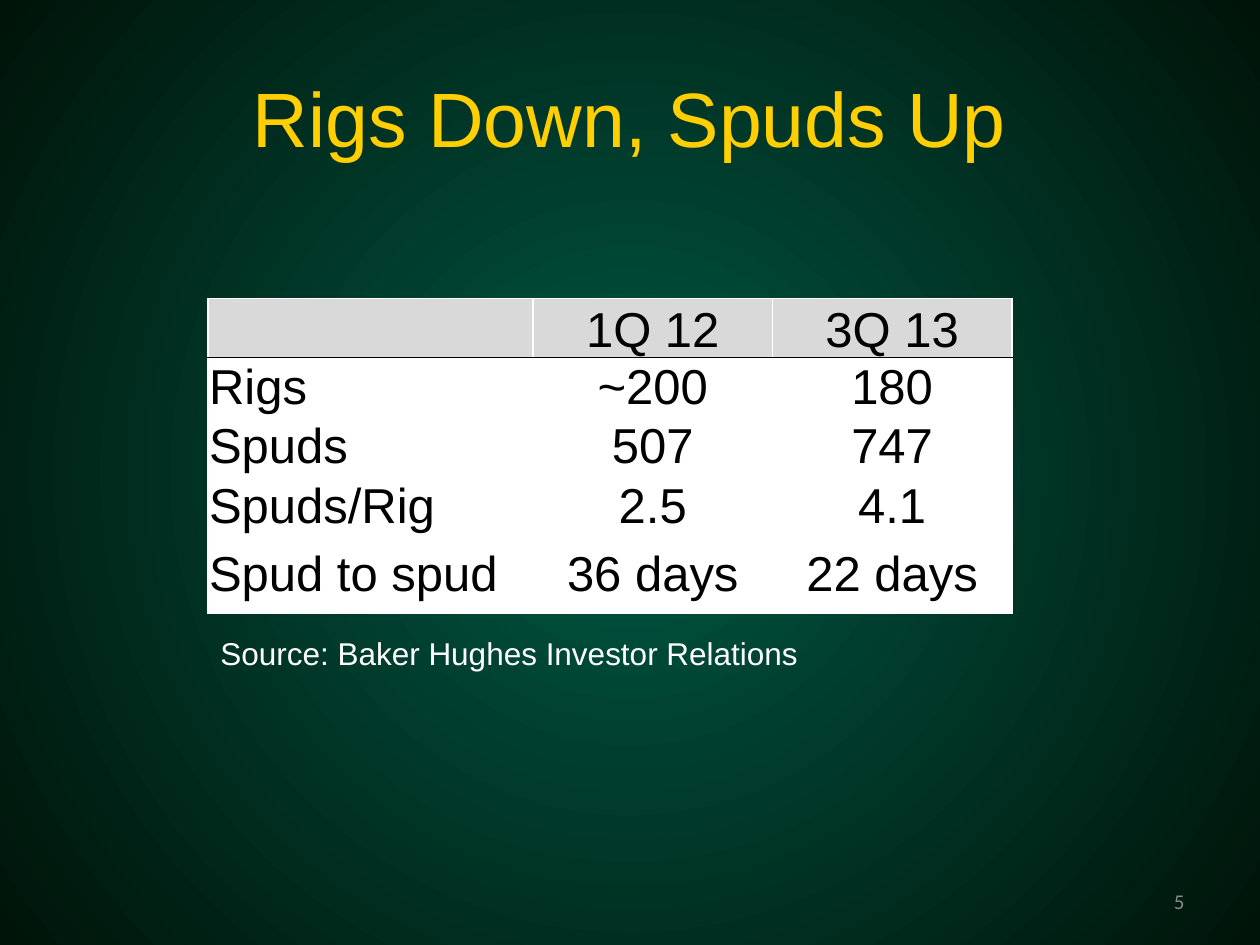
"""Build a slide comparing rig and spud counts in a table."""
import dataclasses

import lxml.etree
import pptx
import pptx.dml.color
import pptx.enum.text
import pptx.oxml
import pptx.oxml.ns
import pptx.slide
import pptx.table
import pptx.text.text
import pptx.util

Pt = pptx.util.Pt
RGB = pptx.dml.color.RGBColor
Align = pptx.enum.text.PP_ALIGN
Anchor = pptx.enum.text.MSO_ANCHOR
qn = pptx.oxml.ns.qn

GOLD = RGB(0xFF, 0xCF, 0x01)
GRAY = RGB(0x89, 0x89, 0x89)
SILVER = RGB(0xD9, 0xD9, 0xD9)
WHITE = RGB(0xFF, 0xFF, 0xFF)
BLACK = RGB(0, 0, 0)
GREEN = RGB(0x00, 0x56, 0x43)
DARK = RGB(0x00, 0x14, 0x09)

ROWS = [
    ("", "1Q 12", "3Q 13"),
    ("Rigs", "~200", "180"),
    ("Spuds", "507", "747"),
    ("Spuds/Rig", "2.5", "4.1"),
    ("Spud to spud", "36 days", "22 days"),
]
WIDTHS = [185.8, 136.8, 136.8]
HEIGHTS = [33.8] * 4 + [44.6]


@dataclasses.dataclass(frozen=True)
class Style:
    size: float
    color: RGB
    align: Align = Align.LEFT
    face: str = "Arial"


@dataclasses.dataclass(frozen=True)
class Label:
    text: str
    left: float
    top: float
    width: float
    height: float
    style: Style
    anchor: Anchor = Anchor.MIDDLE


LABELS = [
    Label("Rigs Down, Spuds Up", 36, 21.6, 648, 90, Style(44, GOLD, Align.CENTER)),
    Label("5", 516, 500.4, 168, 28.8, Style(12, GRAY, Align.RIGHT, "Calibri")),
    Label("Source: Baker Hughes Investor Relations", 118.8, 358.6, 397.4, 28.8,
          Style(18, WHITE), Anchor.TOP),
]


def write(frame: pptx.text.text.TextFrame, text: str, style: Style) -> None:
    """Add one styled run to the first paragraph of a frame."""
    para = frame.paragraphs[0]
    para.alignment = style.align
    run = para.add_run()
    run.text = text
    run.font.name = style.face
    run.font.size = Pt(style.size)
    run.font.color.rgb = style.color


def draw_label(slide: pptx.slide.Slide, label: Label) -> None:
    """Draw a text box."""
    box = slide.shapes.add_textbox(
        Pt(label.left), Pt(label.top), Pt(label.width), Pt(label.height))
    frame = box.text_frame
    frame.word_wrap = True
    frame.vertical_anchor = label.anchor
    write(frame, label.text, label.style)


def paint(slide: pptx.slide.Slide) -> None:
    """Give the slide a radial gradient background."""
    fill = slide.background.fill
    fill.gradient()
    for stop, place, color in zip(fill.gradient_stops, (0.02, 1), (GREEN, DARK)):
        stop.position = place
        stop.color.rgb = color
    grad = slide.element.find(".//" + qn("a:gradFill"))
    grad.remove(grad.find(qn("a:lin")))
    radial = lxml.etree.SubElement(grad, qn("a:path"), path="circle")
    half = dict.fromkeys("ltrb", "50000")
    lxml.etree.SubElement(radial, qn("a:fillToRect"), half)


def edge(cell: pptx.table._Cell, side: str, color: RGB) -> None:
    """Draw a one-point border on one side of a cell."""
    line = lxml.etree.Element(qn("a:ln" + side), w=str(Pt(1)))
    fill = lxml.etree.SubElement(line, qn("a:solidFill"))
    lxml.etree.SubElement(fill, qn("a:srgbClr"), val=str(color))
    cell._tc.get_or_add_tcPr().insert("LRTB".index(side), line)


def draw_cell(cell: pptx.table._Cell, text: str, row: int, col: int) -> None:
    """Fill, border and write one table cell."""
    cell.margin_left = cell.margin_right = cell.margin_top = Pt(0.7)
    cell.margin_bottom = Pt(0)
    cell.vertical_anchor = Anchor.MIDDLE if row else Anchor.BOTTOM
    cell.fill.solid()
    cell.fill.fore_color.rgb = WHITE if row else SILVER
    rule = {(0, "B"), (1, "T")}
    for side in "LRTB":
        edge(cell, side, BLACK if (row, side) in rule else WHITE)
    if text:
        align = Align.CENTER if col else Align.LEFT
        write(cell.text_frame, text, Style(28, BLACK, align))


def draw_table(slide: pptx.slide.Slide) -> None:
    """Draw the table of rigs and spuds."""
    table = slide.shapes.add_table(
        len(ROWS), len(WIDTHS), Pt(118.8), Pt(170.6),
        Pt(sum(WIDTHS)), Pt(sum(HEIGHTS))).table
    table.first_row = table.horz_banding = False
    for column, width in zip(table.columns, WIDTHS):
        column.width = Pt(width)
    for row, (texts, height) in enumerate(zip(ROWS, HEIGHTS)):
        table.rows[row].height = Pt(height)
        for col, text in enumerate(texts):
            draw_cell(table.cell(row, col), text, row, col)


def main() -> None:
    """Build and save the slide."""
    deck = pptx.Presentation()
    deck.slide_width, deck.slide_height = Pt(720), Pt(540)
    slide = deck.slides.add_slide(deck.slide_layouts[6])
    paint(slide)
    draw_table(slide)
    for label in LABELS:
        draw_label(slide, label)
    deck.save("out.pptx")


if __name__ == "__main__":
    main()
